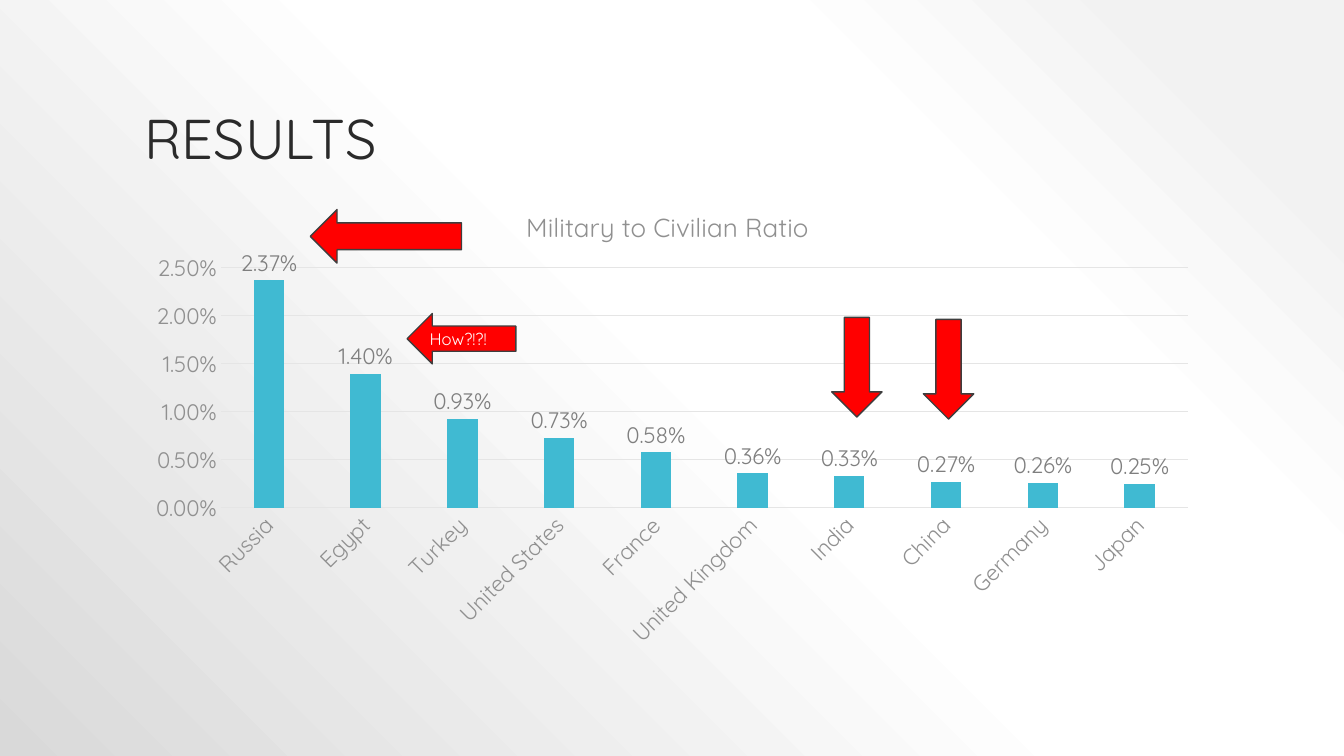
from pptx import Presentation
from pptx import util as u
from pptx.chart.data import CategoryChartData
from pptx.dml.color import RGBColor
from pptx.enum import chart as charts, shapes, text
from pptx.oxml import parse_xml
from pptx.oxml.ns import nsdecls, qn

COLORS = {
    "title": "2A2A2A", "axis": "909090", "grid": "E5E5E5", "label": "7F7F7F",
    "bar": "40BAD2", "arrow": "FF0000", "outline": "3E3E3E", "white": "FFFFFF",
    "mist": "F2F2F2", "gray": "D9D9D9",
}
RATIOS = {
    "Russia": 0.0237, "Egypt": 0.014, "Turkey": 0.0093, "United States": 0.0073,
    "France": 0.0058, "United Kingdom": 0.0036, "India": 0.0033,
    "China": 0.0027, "Germany": 0.0026, "Japan": 0.0025,
}
BACKGROUND_STOPS = [(10, "mist"), (28, "white"), (48, "white"), (100, "gray")]
PERCENT = "0.00%"


class SlideBuilder:
    """Holds the slide and its style, and adds each kind of element."""

    font_name = "Quicksand"

    def __init__(self, slide):
        self.slide = slide

    def color(self, name):
        return RGBColor.from_string(COLORS[name])

    def style_font(self, font, size, color):
        font.name = self.font_name
        font.size = u.Pt(size)
        font.bold = False
        font.color.rgb = self.color(color)

    def style_line(self, line, color, width):
        line.color.rgb = self.color(color)
        line.width = u.Pt(width)

    def background(self, stops):
        self.slide.background.fill.gradient()
        gradient = next(self.slide.element.iter(qn("a:gradFill")))
        stop_xml = "".join(
            f'<a:gs pos="{position * 1000}"><a:srgbClr val="{COLORS[name]}"/></a:gs>'
            for position, name in stops)
        gradient.getparent().replace(gradient, parse_xml(
            f'<a:gradFill {nsdecls("a")} rotWithShape="1"><a:gsLst>{stop_xml}</a:gsLst>'
            '<a:path path="circle"><a:fillToRect l="100000" b="100000"/></a:path>'
            '</a:gradFill>'))

    def title(self, wording, left, top, width, height):
        box = self.slide.shapes.add_textbox(*map(u.Cm, (left, top, width, height)))
        frame = box.text_frame
        frame.word_wrap = True
        frame.vertical_anchor = text.MSO_ANCHOR.BOTTOM
        frame.text = wording
        paragraph = frame.paragraphs[0]
        paragraph.line_spacing = 0.9
        self.style_font(paragraph.runs[0].font, 40, "title")

    def arrow(self, kind, left, top, width, height, wording=""):
        shape = self.slide.shapes.add_shape(kind, *map(u.Cm, (left, top, width, height)))
        shape.shadow.inherit = False
        shape.fill.solid()
        shape.fill.fore_color.rgb = self.color("arrow")
        self.style_line(shape.line, "outline", 1)
        if wording:
            frame = shape.text_frame
            frame.text = wording
            frame.vertical_anchor = text.MSO_ANCHOR.MIDDLE
            paragraph = frame.paragraphs[0]
            paragraph.alignment = text.PP_ALIGN.LEFT
            self.style_font(paragraph.runs[0].font, 12, "white")

    def place(self, element, index, target="", **fractions):
        for layout in element.findall(qn("c:layout")):
            element.remove(layout)
        modes = "".join(f'<c:{axis}Mode val="edge"/>' for axis in "xy")
        sizes = "".join(f'<c:{key} val="{value}"/>' for key, value in fractions.items())
        element.insert(index, parse_xml(
            f'<c:layout {nsdecls("c")}><c:manualLayout>{target}{modes}{sizes}'
            '</c:manualLayout></c:layout>'))

    def column_chart(self, heading, values, left, top, width, height):
        data = CategoryChartData(number_format=PERCENT)
        data.categories = list(values)
        data.add_series("Series 1", list(values.values()))
        chart = self.slide.shapes.add_chart(
            charts.XL_CHART_TYPE.COLUMN_CLUSTERED,
            *map(u.Cm, (left, top, width, height)), data).chart
        chart.has_legend = False
        self.style_font(chart.font, 16, "axis")
        self.chart_heading(chart, heading)
        self.columns(chart.plots[0])
        self.axes(chart)
        self.place(next(chart.element.iter(qn("c:plotArea"))), 0,
                   '<c:layoutTarget val="inner"/>', x=0.08, y=0.185, w=0.9, h=0.501)

    def chart_heading(self, chart, heading):
        chart.has_title = True
        frame = chart.chart_title.text_frame
        frame.text = heading
        self.style_font(frame.paragraphs[0].runs[0].font, 18.6, "axis")
        self.place(next(chart.element.iter(qn("c:title"))), 1, x=0.36, y=0.05)

    def columns(self, plot):
        plot.gap_width = 219
        plot.overlap = -27
        plot.vary_by_categories = False
        fill = plot.series[0].format.fill
        fill.solid()
        fill.fore_color.rgb = self.color("bar")
        plot.has_data_labels = True
        labels = plot.data_labels
        labels.show_value = True
        labels.position = charts.XL_LABEL_POSITION.OUTSIDE_END
        labels.number_format = PERCENT
        labels.number_format_is_linked = False
        self.style_font(labels.font, 16, "label")

    def axes(self, chart):
        countries, ratios = chart.category_axis, chart.value_axis
        for axis in (countries, ratios):
            axis.major_tick_mark = charts.XL_TICK_MARK.NONE
            axis.minor_tick_mark = charts.XL_TICK_MARK.NONE
            self.style_font(axis.tick_labels.font, 16, "axis")
        self.style_line(countries.format.line, "grid", 0.75)
        next(next(chart.element.iter(qn("c:catAx"))).iter(qn("a:bodyPr"))).set("rot", "-2700000")
        ratios.minimum_scale, ratios.maximum_scale, ratios.major_unit = 0, 0.025, 0.005
        ratios.tick_labels.number_format = PERCENT
        ratios.tick_labels.number_format_is_linked = False
        ratios.format.line.fill.background()
        ratios.has_major_gridlines = True
        self.style_line(ratios.major_gridlines.format.line, "grid", 0.75)


def main():
    presentation = Presentation()
    presentation.slide_width = u.Cm(33.87)
    presentation.slide_height = u.Cm(19.05)
    builder = SlideBuilder(presentation.slides.add_slide(presentation.slide_layouts[6]))
    builder.background(BACKGROUND_STOPS)
    builder.title("RESULTS", 3.39, 0.76, 27.09, 3.68)
    builder.column_chart("Military to Civilian Ratio", RATIOS, 3.39, 4.52, 27.09, 12.07)
    down, left = shapes.MSO_SHAPE.DOWN_ARROW, shapes.MSO_SHAPE.LEFT_ARROW
    builder.arrow(down, 20.96, 8, 1.27, 2.51)
    builder.arrow(left, 7.82, 5.28, 3.81, 1.35)
    builder.arrow(left, 10.26, 7.9, 2.74, 1.27, "How?!?!")
    builder.arrow(down, 23.27, 8.05, 1.27, 2.51)
    presentation.save("out.pptx")


if __name__ == "__main__":
    main()
